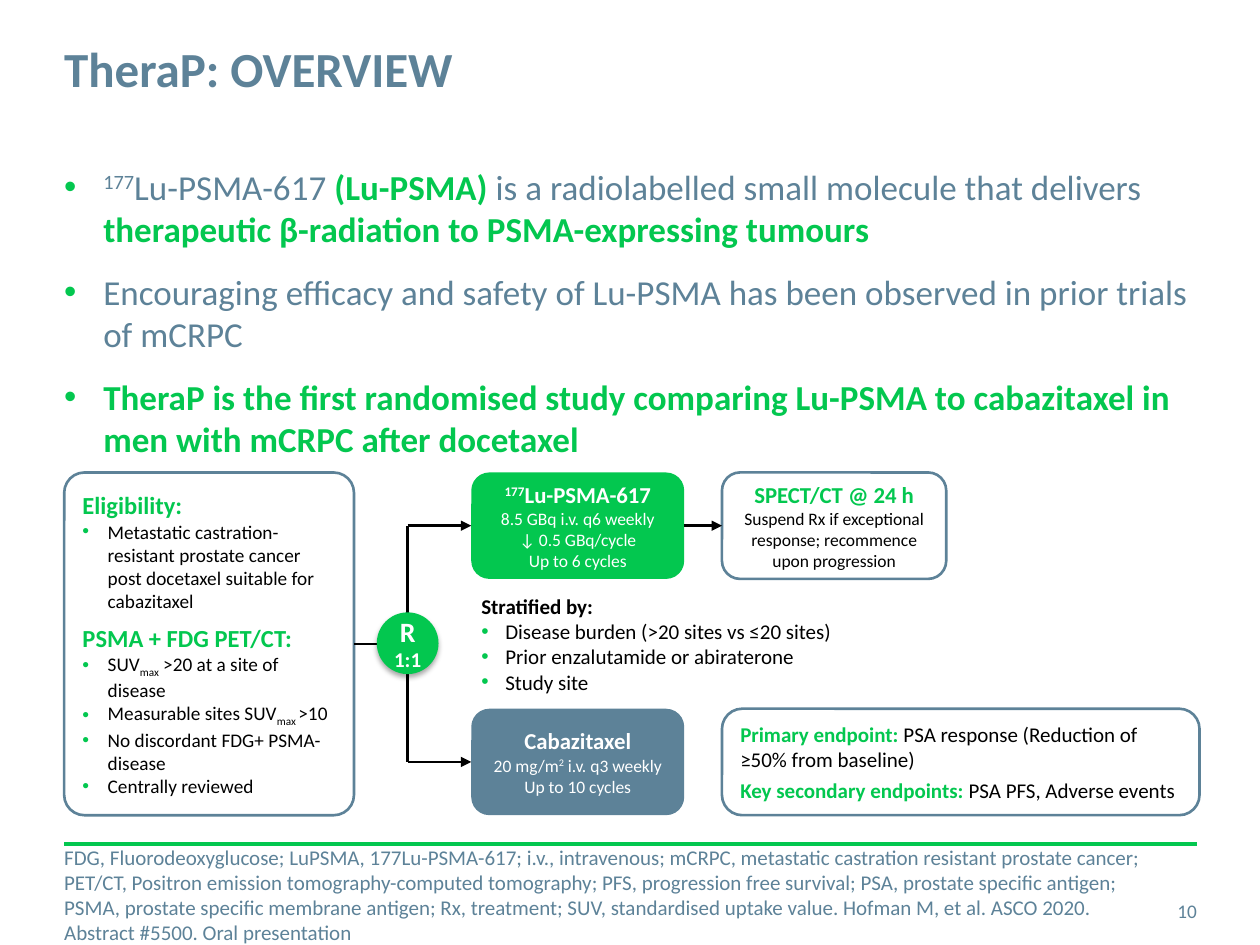
import dataclasses

import lxml.etree
import pptx
import pptx.dml.color
import pptx.enum.shapes
import pptx.enum.text
import pptx.oxml
import pptx.oxml.ns
import pptx.util

SHAPE = pptx.enum.shapes.MSO_SHAPE
ANCHOR = pptx.enum.text.MSO_ANCHOR
ALIGN = pptx.enum.text.PP_ALIGN
qn = pptx.oxml.ns.qn
COLUMNS, ROWS = 100, 75
CELL = pptx.util.Inches(0.1)


class Theme:
    font = "Calibri"
    green, slate, black, white = "03C74F", "5D8298", "000000", "FFFFFF"
    title, body, heading, arm, note, detail, dose = 28, 20, 14, 13, 12, 11, 10
    ratio = 16
    line, rule = 1.5, 2


@dataclasses.dataclass
class Box:
    """An area in grid columns and rows."""
    col: float
    row: float
    cols: float
    rows: float

    def inner(self, col, row, cols, rows):
        return Box(self.col + col, self.row + row, cols, rows)

    def emu(self):
        return [round(n * CELL) for n in (self.col, self.row, self.cols, self.rows)]


@dataclasses.dataclass
class Para:
    """Spans are strings or (text, overrides) pairs; a newline breaks the line."""
    spans: list
    size: float
    color: str
    bold: bool = False
    align: object = ALIGN.LEFT
    before: float = 0
    spacing: float = 1
    indent: float = 0


def rgb(color):
    return pptx.dml.color.RGBColor.from_string(color)


def style(font, size=None, color=None, bold=None, base=None):
    if size:
        font.size = pptx.util.Pt(size)
    if color:
        font.color.rgb = rgb(color)
    if bold is not None:
        font.bold = bold
    if base:
        font._element.set("baseline", str(base * 1000))


def add_bullet(para, indent):
    properties = para._p.get_or_add_pPr()
    width = round(indent * CELL)
    properties.set("marL", str(width))
    properties.set("indent", str(-width))
    color = lxml.etree.SubElement(properties, qn("a:buClr"))
    lxml.etree.SubElement(color, qn("a:srgbClr"), val=Theme.green)
    lxml.etree.SubElement(properties, qn("a:buFont"), typeface="Arial")
    lxml.etree.SubElement(properties, qn("a:buChar"), char="•")


def write(shape, paras, anchor=ANCHOR.TOP, margins=(0, 0)):
    frame = shape.text_frame
    frame.word_wrap = True
    frame.vertical_anchor = anchor
    frame.margin_left = frame.margin_right = round(margins[0] * CELL)
    frame.margin_top = frame.margin_bottom = round(margins[1] * CELL)
    for index, item in enumerate(paras):
        para = frame.add_paragraph() if index else frame.paragraphs[0]
        para.alignment = item.align
        para.line_spacing = item.spacing
        para.space_before = pptx.util.Pt(item.before)
        if item.indent:
            add_bullet(para, item.indent)
        para.font.name = Theme.font
        style(para.font, item.size, item.color, item.bold)
        for entry in item.spans:
            text, overrides = (entry, {}) if isinstance(entry, str) else entry
            for number, line in enumerate(text.split("\n")):
                if number:
                    para.add_line_break()
                if line:
                    span = para.add_run()
                    span.text = line
                    style(span.font, **overrides)


def add_text(page, box, paras, anchor=ANCHOR.TOP):
    write(page.shapes.add_textbox(*box.emu()), paras, anchor)


def add_panel(page, box, paras, fill, corner, margins, outline=None):
    panel = page.shapes.add_shape(SHAPE.ROUNDED_RECTANGLE, *box.emu())
    panel.adjustments[0] = corner
    panel.shadow.inherit = False
    panel.fill.solid()
    panel.fill.fore_color.rgb = rgb(fill)
    if outline:
        panel.line.color.rgb = rgb(outline)
        panel.line.width = pptx.util.Pt(Theme.line)
    else:
        panel.line.fill.background()
    write(panel, paras, ANCHOR.MIDDLE, margins)
    return panel


def add_line(page, start, end, color=Theme.black, width=Theme.line, arrow=False):
    points = [round(n * CELL) for n in (*start, *end)]
    line = page.shapes.add_connector(pptx.enum.shapes.MSO_CONNECTOR.STRAIGHT, *points)
    line.line.color.rgb = rgb(color)
    line.line.width = pptx.util.Pt(width)
    if arrow:
        outline = line._element.spPr.find(qn("a:ln"))
        lxml.etree.SubElement(outline, qn("a:tailEnd"), type="triangle")
    lxml.etree.SubElement(line._element.spPr, qn("a:effectLst"))
    return line


def add_header(page, box):
    add_text(page, box, [Para(["TheraP: OVERVIEW"], Theme.title, Theme.slate, True, spacing=1.07)])


def add_summary(page, box):
    strong = dict(color=Theme.green, bold=True)
    points = [
        [("177", dict(base=30)), "Lu-PSMA-617 ", ("(Lu-PSMA) ", strong),
         "is a radiolabelled small molecule that delivers ",
         ("therapeutic β-radiation to PSMA-expressing tumours", strong)],
        ["Encouraging efficacy and safety of Lu-PSMA has been observed in prior trials of mCRPC"],
        [("TheraP is the first randomised study comparing Lu-PSMA to cabazitaxel in men with "
          "mCRPC after docetaxel", strong)],
    ]
    add_text(page, box, [Para(spans, Theme.body, Theme.slate, before=12 if index else 0, indent=3.1)
                         for index, spans in enumerate(points)])


def add_eligibility(page, box):
    low = dict(base=-25)
    groups = [
        ("Eligibility:", [["Metastatic castration-resistant prostate cancer post docetaxel "
                           "suitable for cabazitaxel"]]),
        ("PSMA + FDG PET/CT:", [["SUV", ("max", low), " >20 at a site of disease"],
                                ["Measurable sites SUV", ("max ", low), ">10"],
                                ["No discordant FDG+ PSMA-disease"],
                                ["Centrally reviewed"]]),
    ]
    paras = []
    for heading, items in groups:
        paras.append(Para([heading], Theme.heading, Theme.green, True, before=6 if paras else 0))
        paras += [Para(item, Theme.detail, Theme.black, indent=2) for item in items]
    return add_panel(page, box, paras, Theme.white, 0.07, (1, 0.5), Theme.slate)


def add_step(page, box, heading, details, fill, heading_color, color, outline=None):
    paras = [Para(heading, Theme.arm, heading_color, True, ALIGN.CENTER),
             Para(details, Theme.dose, color, align=ALIGN.CENTER)]
    return add_panel(page, box, paras, fill, 0.17, (0.4, 0.4), outline)


def add_randomiser(page, box):
    disc = page.shapes.add_shape(SHAPE.OVAL, *box.emu())
    disc.fill.solid()
    disc.fill.fore_color.rgb = rgb(Theme.green)
    disc.line.fill.background()
    disc.shadow.inherit = False
    effects = disc._element.spPr.find(qn("a:effectLst"))
    shadow = lxml.etree.SubElement(effects, qn("a:outerShdw"), blurRad="39400", dist="22900",
                                   dir="5400000", rotWithShape="0")
    tint = lxml.etree.SubElement(shadow, qn("a:srgbClr"), val=Theme.black)
    lxml.etree.SubElement(tint, qn("a:alpha"), val="35000")
    ratio = Para(["R\n", ("1:1", dict(size=Theme.note))], Theme.ratio, Theme.white, True,
                 ALIGN.CENTER, spacing=0.9)
    add_text(page, box.inner(0, 0.5, box.cols, 4.2), [ratio])


def add_strata(page, box):
    strata = ["Disease burden (>20 sites vs ≤20 sites)", "Prior enzalutamide or abiraterone", "Study site"]
    add_text(page, box, [Para(["Stratified by:"], Theme.note, Theme.black, True)]
             + [Para([item], Theme.note, Theme.black, indent=1.9) for item in strata])


def add_endpoints(page, box):
    strong = dict(color=Theme.green, bold=True)
    add_panel(page, box, [
        Para([("Primary endpoint: ", strong), "PSA response (Reduction of \n≥50% from baseline)"],
             Theme.note, Theme.black),
        Para([("Key secondary endpoints: ", strong), "PSA PFS, Adverse events"],
             Theme.note, Theme.black, before=3),
    ], Theme.white, 0.19, (1, 0.5), Theme.slate)


def add_design(page, box):
    step_rows = 8.45
    arm_col, follow_col, low_row = 32.3, 52.2, box.rows - step_rows
    eligibility = add_eligibility(page, box.inner(0, 0, 23, box.rows))
    lutetium = add_step(page, box.inner(arm_col, 0, 16.9, step_rows),
                        [("177", dict(base=30)), "Lu-PSMA-617"],
                        ["8.5 GBq i.v. q6 weekly\n↓ 0.5 GBq/cycle\nUp to 6 cycles"],
                        Theme.green, Theme.white, Theme.white)
    cabazitaxel = add_step(page, box.inner(arm_col, low_row, 16.9, step_rows), ["Cabazitaxel"],
                           ["20 mg/m", ("2", dict(base=30)), " i.v. q3 weekly\nUp to 10 cycles"],
                           Theme.slate, Theme.white, Theme.white)
    scan = add_step(page, box.inner(follow_col, 0, 17.8, step_rows), ["SPECT/CT @ 24 h"],
                    ["Suspend Rx if exceptional response; recommence upon progression"],
                    Theme.white, Theme.green, Theme.black, Theme.slate)
    add_endpoints(page, box.inner(follow_col, low_row, 37.9, step_rows))
    add_strata(page, box.inner(33.1, 9.6, 28.1, 8.1))

    disc = box.inner(24.8, 11.1, 4.9, 4.9)
    trunk = disc.col + disc.cols / 2
    top, bottom = box.row + step_rows / 2, box.row + low_row + step_rows / 2
    add_line(page, (trunk, top), (trunk, bottom))
    for arm, row in ((lutetium, top), (cabazitaxel, bottom)):
        add_line(page, (trunk, row), (box.col + arm_col, row), arrow=True).end_connect(arm, 1)
    follow = add_line(page, (box.col, top), (box.col + follow_col, top), arrow=True)
    follow.begin_connect(lutetium, 3)
    follow.end_connect(scan, 1)
    middle = box.row + box.rows / 2
    add_line(page, (box.col, middle), (disc.col, middle)).begin_connect(eligibility, 3)
    add_randomiser(page, disc)


def add_footer(page, box):
    add_line(page, (box.col, box.row), (box.col + box.cols, box.row), Theme.green, Theme.rule)
    add_text(page, box.inner(0, 2, 86.7, 4), [Para([
        "FDG, Fluorodeoxyglucose; LuPSMA, 177Lu-PSMA-617; i.v., intravenous; mCRPC, metastatic "
        "castration resistant prostate cancer; PET/CT, Positron emission tomography-computed "
        "tomography; PFS, progression free survival; PSA, prostate specific antigen; PSMA, prostate "
        "specific membrane antigen; Rx, treatment; SUV, standardised uptake value. Hofman M, et al. "
        "ASCO 2020. Abstract #5500. Oral presentation"], Theme.note, Theme.slate)], ANCHOR.MIDDLE)
    add_text(page, box.inner(box.cols - 6.4, 3.3, 6.4, 4),
             [Para(["10"], Theme.detail, Theme.slate, align=ALIGN.RIGHT)], ANCHOR.MIDDLE)


def main():
    deck = pptx.Presentation()
    deck.slide_width, deck.slide_height = COLUMNS * CELL, ROWS * CELL
    page = deck.slides.add_slide(deck.slide_layouts[6])
    left = 5.1
    add_header(page, Box(left, 2.7, 71.7, 8.8))
    add_summary(page, Box(left, 13.1, 89.9, 23.5))
    add_design(page, Box(left, 37.5, 90.1, 27.2))
    add_footer(page, Box(left, 67, 89.9, 7.5))
    deck.save("out.pptx")


if __name__ == "__main__":
    main()
